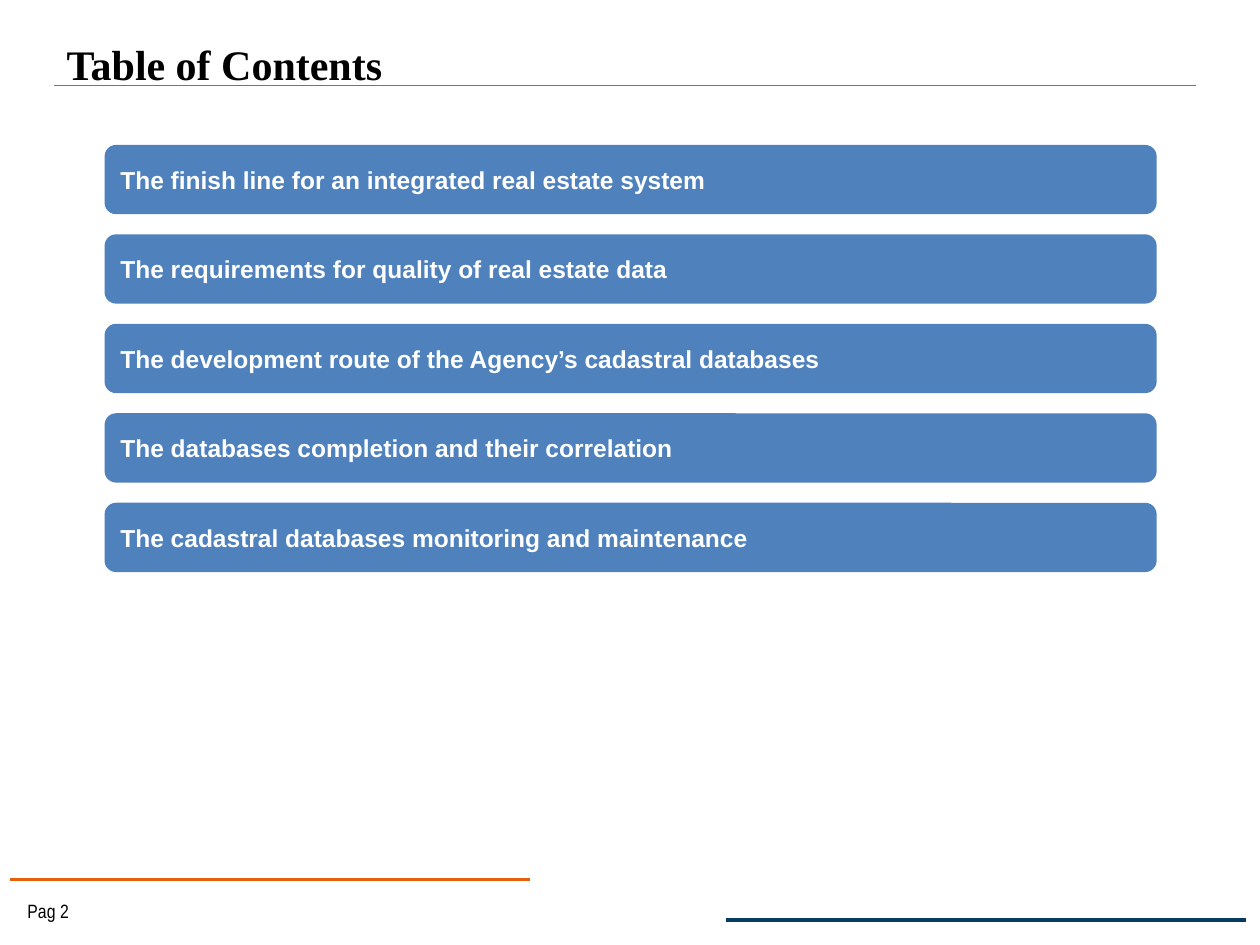
from pptx import Presentation
from pptx.dml.color import RGBColor
from pptx.enum.shapes import MSO_CONNECTOR, MSO_SHAPE
from pptx.enum.text import MSO_ANCHOR, PP_ALIGN
from pptx.oxml.ns import qn
from pptx.util import Inches, Pt
from lxml.etree import SubElement

TITLE = "Table of Contents"
PAGE_LABEL = "Pag 2"
TOPICS = [
    "The finish line for an integrated real estate system",
    "The requirements for quality of real estate data",
    "The development route of the Agency’s cadastral databases",
    "The databases completion and their correlation",
    "The cadastral databases monitoring and maintenance",
]
COLORS = {
    "rule": "4A7EBB",
    "orange": "E3600F",
    "navy": "073C62",
    "bar": "4F81BD",
    "ink": "000000",
    "light": "FFFFFF",
}
RULES = [
    (0.43, 9.49, 0.68, "rule", 0.75),
    (0.08, 4.21, 6.98, "orange", 2),
    (5.76, 9.89, 7.3, "navy", 2),
]
BAR_LEFT, BAR_TOP, BAR_WIDTH, BAR_HEIGHT, BAR_PITCH = 0.83, 1.15, 8.35, 0.55, 0.71


def color(name):
    return RGBColor.from_string(COLORS[name])


def write(shape, text, font, size, ink, bold=False):
    para = shape.text_frame.paragraphs[0]
    para.alignment = PP_ALIGN.LEFT
    span = para.add_run()
    span.text = text
    span.font.name = font
    span.font.size = Pt(size)
    span.font.bold = bold
    span.font.color.rgb = color(ink)
    return para


def add_rule(page, left, right, top, ink, width):
    rule = page.shapes.add_connector(
        MSO_CONNECTOR.STRAIGHT, Inches(left), Inches(top), Inches(right), Inches(top)
    )
    rule.line.color.rgb = color(ink)
    rule.line.width = Pt(width)
    SubElement(rule.element.spPr, qn("a:effectLst"))


def add_box(page, left, top, width, height):
    box = page.shapes.add_textbox(Inches(left), Inches(top), Inches(width), Inches(height))
    box.text_frame.word_wrap = True
    return box


def add_bar(page, row, topic):
    bar = page.shapes.add_shape(
        MSO_SHAPE.ROUNDED_RECTANGLE,
        Inches(BAR_LEFT), Inches(BAR_TOP + row * BAR_PITCH),
        Inches(BAR_WIDTH), Inches(BAR_HEIGHT),
    )
    bar.shadow.inherit = False
    bar.fill.solid()
    bar.fill.fore_color.rgb = color("bar")
    bar.line.fill.background()
    bar.text_frame.word_wrap = True
    bar.text_frame.vertical_anchor = MSO_ANCHOR.MIDDLE
    write(bar, topic, "Arial", 14, "light", True)


def main():
    deck = Presentation()
    deck.slide_width, deck.slide_height = Inches(10), Inches(7.5)
    page = deck.slides.add_slide(deck.slide_layouts[6])

    for rule in RULES:
        add_rule(page, *rule)

    label = add_box(page, 0.12, 7.09, 1.17, 0.28)
    write(label, PAGE_LABEL, "Arial Narrow", 11, "ink")

    title = add_box(page, 0.43, 0.21, 9.06, 0.49)
    title.text_frame.margin_top = Inches(0.09)
    title.text_frame.margin_bottom = Inches(0.01)
    para = write(title, TITLE, "Times New Roman", 24, "ink", True)
    para.line_spacing = 1.02

    for row, topic in enumerate(TOPICS):
        add_bar(page, row, topic)

    deck.save("out.pptx")


if __name__ == "__main__":
    main()
